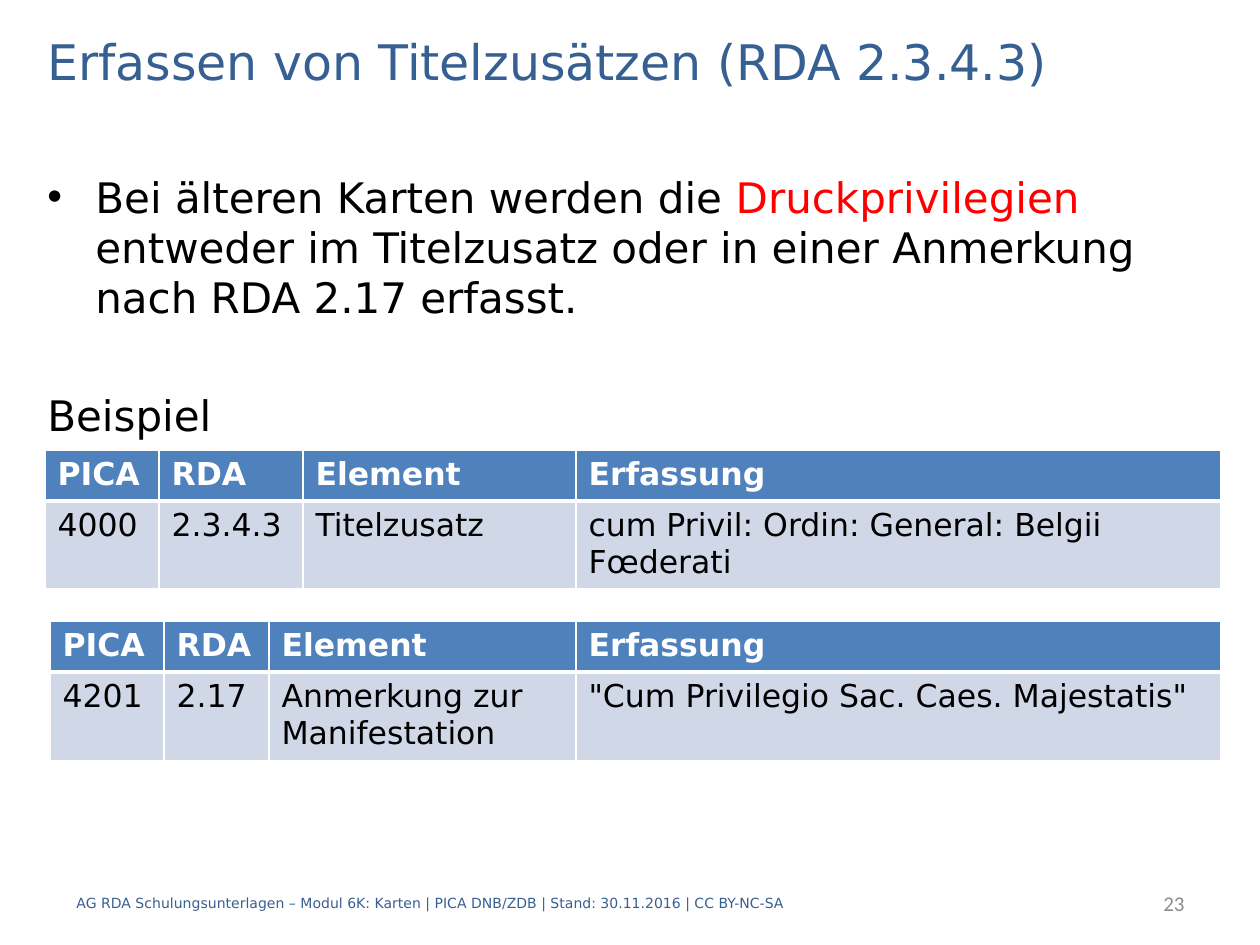
from lxml import etree
from pptx import Presentation
from pptx.dml.color import RGBColor
from pptx.enum.text import MSO_ANCHOR, PP_ALIGN
from pptx.oxml.ns import qn
from pptx.util import Emu, Pt

TOP, MIDDLE = MSO_ANCHOR.TOP, MSO_ANCHOR.MIDDLE
LEFT, RIGHT = PP_ALIGN.LEFT, PP_ALIGN.RIGHT
EMU_PER_PX = 914400 / 126
SANS = "DejaVu Sans"
COLORS = {
    "heading": "376092", "text": "000000", "accent": "FF0000", "number": "8C8C8C",
    "header": "4F81BD", "row": "D0D8E8", "white": "FFFFFF",
}


def px(length):
    return Emu(round(length * EMU_PER_PX))


def add_run(paragraph, text, size, color, font=SANS, bold=False):
    run = paragraph.add_run()
    run.text = text
    for key, value in {"size": Pt(size), "name": font, "bold": bold}.items():
        setattr(run.font, key, value)
    run.font.color.rgb = RGBColor.from_string(COLORS[color])


prs = Presentation()
prs.slide_width, prs.slide_height = px(1260), px(945)
slide = prs.slides.add_slide(prs.slide_layouts[6])

# Text blocks: box, anchor, alignment, space before, size, font, runs
texts = [
    ((35, 25, 1225, 71), MIDDLE, LEFT, 0, 28, SANS,
     [("Erfassen von Titelzusätzen (RDA 2.3.4.3)", "heading")]),
    ((35, 165, 1211, 149), TOP, LEFT, 4.8, 24, SANS,
     [("Bei älteren Karten werden die ", "text"),
      ("Druckprivilegien ", "accent"),
      ("entweder im Titelzusatz oder in einer Anmerkung nach RDA 2.17 erfasst.", "text")]),
    ((35, 383, 287, 69), TOP, LEFT, 4.8, 24, SANS, [("Beispiel", "text")]),
    ((64, 878, 1052, 50), MIDDLE, LEFT, 0, 8, SANS,
     [("AG RDA Schulungsunterlagen – Modul 6K: Karten | PICA DNB/ZDB | "
       "Stand: 30.11.2016 | CC BY-NC-SA", "heading")]),
    ((997, 878, 200, 50), MIDDLE, RIGHT, 0, 12, "Calibri", [("23", "number")]),
]
paragraphs = []
for box, anchor, alignment, space_before, size, font, runs in texts:
    frame = slide.shapes.add_textbox(*map(px, box)).text_frame
    frame.word_wrap = True
    frame.vertical_anchor = anchor
    paragraph = frame.paragraphs[0]
    paragraph.alignment = alignment
    paragraph.space_before = Pt(space_before)
    for text, color in runs:
        add_run(paragraph, text, size, color, font)
    paragraphs.append(paragraph)

# Bullet with hanging indent on the rule about printing privileges
bullet_format = paragraphs[1]._p.get_or_add_pPr()
for key, length in {"marL": 48, "indent": -48}.items():
    bullet_format.set(key, str(int(px(length))))
etree.SubElement(bullet_format, qn("a:buFont"), typeface="Arial")
etree.SubElement(bullet_format, qn("a:buChar"), char="•")

# Example tables: left, top, column widths, entries
header = ["PICA", "RDA", "Element", "Erfassung"]
row_heights = [51, 85]
examples = [
    (45, 450, [114, 144, 273, 645],
     ["4000", "2.3.4.3", "Titelzusatz", "cum Privil: Ordin: General: Belgii Fœderati"]),
    (50, 621, [114, 105, 307, 645],
     ["4201", "2.17", "Anmerkung zur Manifestation",
      '"Cum Privilegio Sac. Caes. Majestatis"']),
]
for left, top, widths, entries in examples:
    table = slide.shapes.add_table(
        2, 4, px(left), px(top), px(sum(widths)), px(sum(row_heights))).table
    for column, width in zip(table.columns, widths):
        column.width = px(width)
    for r, values in enumerate([header, entries]):
        is_header = r == 0
        table.rows[r].height = px(row_heights[r])
        for c, value in enumerate(values):
            cell = table.cell(r, c)
            # White borders, thicker between header and entries
            cell_format = cell._tc.get_or_add_tcPr()
            borders = {"L": 1, "R": 1, "T": 1 if is_header else 3, "B": 3 if is_header else 1}
            for side, weight in borders.items():
                line = etree.SubElement(cell_format, qn(f"a:ln{side}"), w=str(int(Pt(weight))))
                line_fill = etree.SubElement(line, qn("a:solidFill"))
                etree.SubElement(line_fill, qn("a:srgbClr"), val=COLORS["white"])
            cell.fill.solid()
            cell.fill.fore_color.rgb = RGBColor.from_string(
                COLORS["header" if is_header else "row"])
            add_run(cell.text_frame.paragraphs[0], value, 18,
                    "white" if is_header else "text", bold=is_header)

prs.save("out.pptx")
